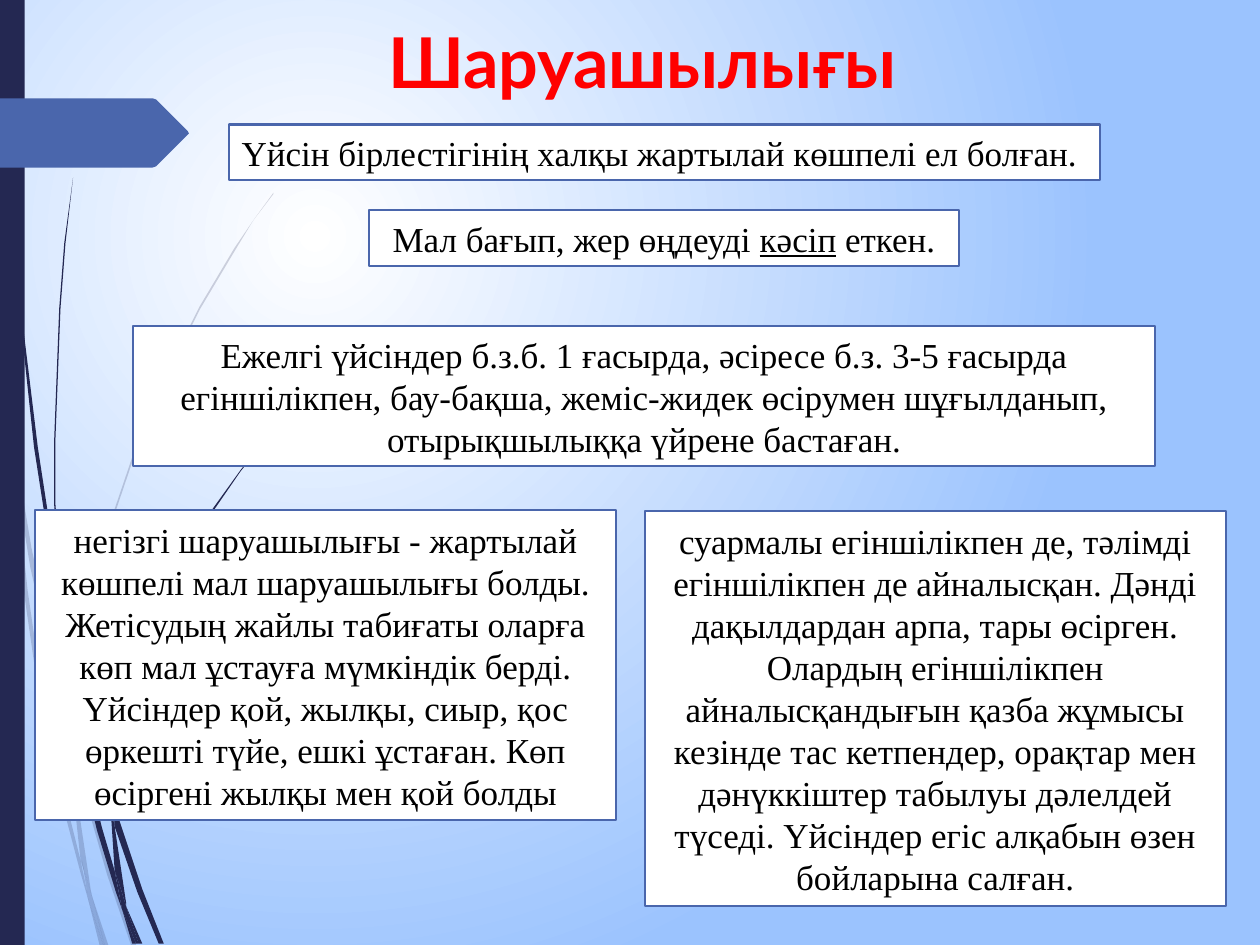
from lxml import etree
from pptx import Presentation, util as u
from pptx.dml.color import RGBColor
from pptx.enum import shapes, text
from pptx.oxml.ns import qn

NAVY, BLUE, WHITE, BLACK, RED, SKY = "242852", "4A66AC", "FFFFFF", "000000", "FF0000", "9BC3FE"
HUNDREDTH_INCH = u.Cm(2.54) / 100


def color(value):
    return RGBColor.from_string(value)


def apply(target, values):
    for key, value in values.items():
        setattr(target, key, value)


def place(*lengths):
    return [u.Cm(length) for length in lengths]


class SlideBuilder:
    title_font = {"name": "Lato", "size": u.Pt(40), "bold": True}
    body_font = {"name": "Times New Roman", "size": u.Pt(20)}
    frame_format = {"word_wrap": True, "auto_size": text.MSO_AUTO_SIZE.NONE,
                    "vertical_anchor": text.MSO_ANCHOR.TOP}

    def __init__(self, slide):
        self.slide = slide

    def background(self, centre, edge):
        fill = self.slide.background.fill
        fill.gradient()
        for stop, value in zip(fill.gradient_stops, (centre, edge)):
            stop.color.rgb = color(value)
        gradient = self.slide._element.find(".//" + qn("a:gradFill"))
        for linear in gradient.findall(qn("a:lin")):
            gradient.remove(linear)
        circle = etree.SubElement(gradient, qn("a:path"), {"path": "circle"})
        etree.SubElement(circle, qn("a:fillToRect"),
                         {"l": "50000", "t": "50000", "r": "100000", "b": "100000"})

    def paint(self, shape, fill, line=None, alpha=None):
        shape.shadow.inherit = False
        shape.fill.solid()
        shape.fill.fore_color.rgb = color(fill)
        if line:
            shape.line.color.rgb = color(line)
            shape.line.width = u.Pt(1.25)
        else:
            shape.line.fill.background()
        if alpha:
            tone = shape._element.spPr.find(".//" + qn("a:srgbClr"))
            etree.SubElement(tone, qn("a:alpha"), {"val": str(alpha * 1000)})

    def outline(self, points, fill, alpha=None):
        builder = self.slide.shapes.build_freeform(*points[0], scale=HUNDREDTH_INCH)
        builder.add_line_segments(points[1:], close=True)
        self.paint(builder.convert_to_shape(), fill, alpha=alpha)

    def rectangle(self, position, fill, line=None):
        shape = self.slide.shapes.add_shape(shapes.MSO_SHAPE.RECTANGLE, *place(*position))
        self.paint(shape, fill, line)
        return shape

    def wording(self, frame, parts, font, tone, align):
        paragraph = frame.paragraphs[0]
        paragraph.alignment = align
        for index, part in enumerate(parts):
            run = paragraph.add_run()
            run.text = part
            apply(run.font, font)
            run.font.color.rgb = color(tone)
            if index % 2:
                run.font.underline = True

    def title(self, position, words):
        heading = self.slide.shapes.title
        apply(heading, dict(zip(("left", "top", "width", "height"), place(*position))))
        apply(heading.text_frame, self.frame_format)
        self.wording(heading.text_frame, [words], self.title_font, RED, text.PP_ALIGN.LEFT)

    def box(self, position, parts, align=text.PP_ALIGN.CENTER, wrap=True):
        frame = self.rectangle(position, WHITE, BLUE).text_frame
        apply(frame, {**self.frame_format, "word_wrap": wrap,
                      "vertical_anchor": text.MSO_ANCHOR.MIDDLE})
        self.wording(frame, parts, self.body_font, BLACK, align)


PALE_STEMS = [
    [(8, 350), (6, 322), (0, 282), (0, 299), (7, 344)],
    [(40, 522), (59, 599), (59, 586), (43, 520), (25, 435), (10, 345), (12, 376), (24, 450)],
    [(64, 607), (61, 596), (61, 610), (85, 694), (104, 750), (108, 750), (88, 692)],
    [(83, 750), (86, 750), (73, 711)],
    [(64, 683), (48, 619), (33, 545), (22, 469), (12, 376), (8, 350), (12, 410), (19, 470),
     (30, 546), (45, 621), (64, 693), (70, 714), (69, 707)],
    [(58, 599), (60, 646), (64, 683), (67, 692), (73, 711), (72, 706), (63, 646), (61, 610)],
    [(61, 584), (65, 522), (76, 462), (92, 405), (111, 349), (134, 295), (159, 245), (187, 198),
     (201, 175), (217, 154), (217, 153), (201, 175), (186, 197), (158, 244), (133, 294),
     (110, 348), (91, 404), (75, 461), (63, 522), (59, 584), (59, 586), (61, 596)],
    [(70, 714), (79, 750), (82, 750)],
    [(67, 692), (65, 683), (69, 707), (70, 714), (82, 750), (83, 750), (73, 711)],
]
DARK_STEMS = [
    [(5, 110), (14, 233), (27, 355), (46, 477), (47, 481), (45, 457), (45, 453), (30, 355),
     (15, 232), (6, 109), (4, 48), (3, 0), (2, 0), (3, 48)],
    [(94, 649), (91, 641), (91, 656), (109, 708), (126, 749), (130, 749), (113, 706)],
    [(91, 691), (81, 657), (69, 608), (60, 556), (53, 505), (47, 477), (56, 557), (65, 609),
     (77, 659), (92, 708), (97, 722), (96, 717)],
    [(50, 472), (48, 453), (44, 400), (44, 349), (48, 245), (52, 193), (58, 141), (51, 193),
     (47, 245), (43, 349), (43, 400), (45, 449), (49, 472)],
    [(110, 749), (113, 749), (100, 719)],
    [(91, 633), (95, 592), (103, 552), (115, 513), (131, 476), (149, 440), (169, 406),
     (191, 374), (203, 359), (216, 344), (215, 344), (203, 358), (191, 373), (168, 405),
     (148, 439), (129, 474), (113, 512), (101, 551), (92, 591), (88, 631), (91, 641)],
    [(97, 722), (105, 749), (108, 749)],
    [(88, 645), (91, 691), (96, 706), (100, 719), (100, 716), (91, 656), (90, 651)],
    [(88, 645), (90, 651), (91, 656), (91, 641), (88, 631), (88, 633)],
    [(96, 706), (91, 691), (96, 717), (97, 722), (108, 749), (110, 749), (100, 719)],
]
TAG = [(149, 107), (124, 132), (121, 133), (0, 133), (0, 78), (121, 78), (124, 79),
       (149, 104), (150, 105.5)]


def main():
    deck = Presentation()
    deck.slide_width, deck.slide_height = place(25.4, 19.05)
    page = SlideBuilder(deck.slides.add_slide(deck.slide_layouts[5]))
    page.background(WHITE, SKY)
    for stem in PALE_STEMS:
        page.outline(stem, NAVY, alpha=20)
    for stem in DARK_STEMS:
        page.outline(stem, NAVY)
    page.rectangle((0, 0, 0.5, 19.05), NAVY)
    page.outline(TAG, BLUE)

    page.title((7.57, 0.25, 12.6, 1.96), "Шаруашылығы")
    page.box((4.62, 2.51, 17.55, 1.12),
             ["Үйсін бірлестігінің халқы жартылай көшпелі ел болған."], text.PP_ALIGN.LEFT)
    page.box((7.44, 4.24, 11.89, 1.12),
             ["Мал бағып, жер өңдеуді ", "кәсіп", " еткен."], wrap=False)
    page.box((2.69, 6.58, 20.6, 2.82),
             ["Ежелгі үйсіндер б.з.б. 1 ғасырда, әсіресе б.з. 3-5 ғасырда егіншілікпен, "
              "бау-бақша, жеміс-жидек өсірумен шұғылданып, отырықшылыққа үйрене бастаған."])
    page.box((0.71, 10.29, 11.71, 6.25),
             ["негізгі шаруашылығы - жартылай көшпелі мал шаруашылығы болды. Жетісудың "
              "жайлы табиғаты оларға көп мал ұстауға мүмкіндік берді. Үйсіндер қой, жылқы, "
              "сиыр, қос өркешті түйе, ешкі ұстаған. Көп өсіргені жылқы мен қой болды"])
    page.box((13, 10.31, 11.71, 7.95),
             ["суармалы егіншілікпен де, тəлімді егіншілікпен де айналысқан. Дəнді "
              "дақылдардан арпа, тары өсірген. Олардың егіншілікпен айналысқандығын қазба "
              "жұмысы кезінде тас кетпендер, орақтар мен дəнүккіштер табылуы дəлелдей "
              "түседі. Үйсіндер егіс алқабын өзен бойларына салған."])
    deck.save("out.pptx")


if __name__ == "__main__":
    main()
